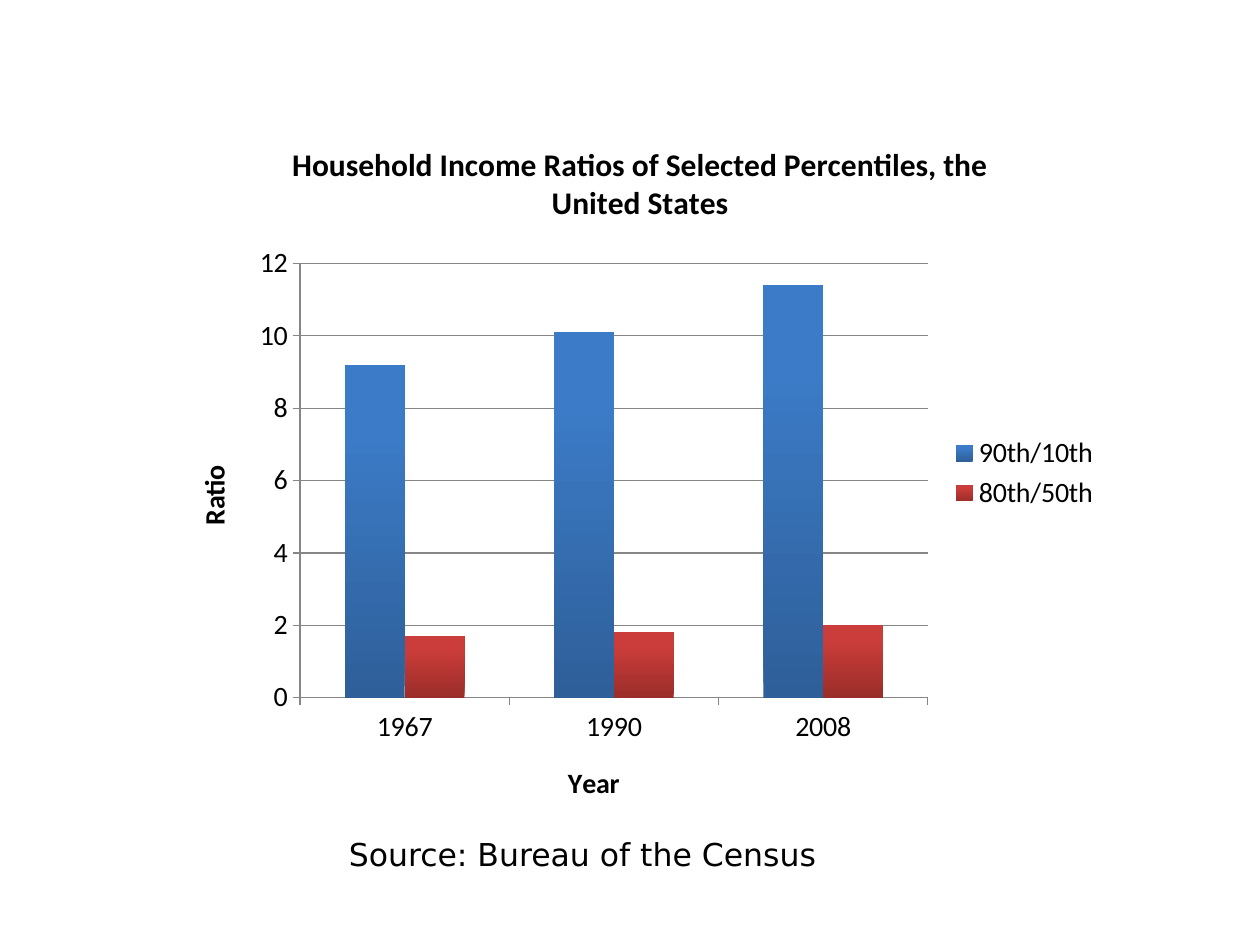
import pptx
import pptx.chart.data
import pptx.dml.color
import pptx.enum.chart
import pptx.util
from pptx.util import Inches

COLORS = {
    "text": "000000",
    "line": "868686",
    "blue_dark": "2E5F99",
    "blue_light": "3C7BC7",
    "red_dark": "9B2D2A",
    "red_light": "CB3D3A",
}
YEARS = ["1967", "1990", "2008"]
RATIOS = [
    ("90th/10th", [9.2, 10.1, 11.4], "blue"),
    ("80th/50th", [1.7, 1.8, 2], "red"),
]


def rgb(name):
    return pptx.dml.color.RGBColor.from_string(COLORS[name])


def style_font(font, size, bold=False, name="Calibri"):
    font.size = pptx.util.Pt(size)
    font.bold = bold
    font.name = name
    font.color.rgb = rgb("text")


def write_text(frame, text, **font_format):
    run = frame.paragraphs[0].add_run()
    run.text = text
    style_font(run.font, **font_format)


def style_line(line):
    line.color.rgb = rgb("line")
    line.width = pptx.util.Pt(0.75)


def style_axis(axis, title):
    write_text(axis.axis_title.text_frame, title, size=16, bold=True)
    style_font(axis.tick_labels.font, 16)
    style_line(axis.format.line)
    axis.major_tick_mark = pptx.enum.chart.XL_TICK_MARK.OUTSIDE
    axis.minor_tick_mark = pptx.enum.chart.XL_TICK_MARK.NONE


def shade_series(series, hue):
    """Fill the columns from dark at the bottom to light near the top."""
    fill = series.format.fill
    fill.gradient()
    fill.gradient_angle = 90
    stops = zip(fill.gradient_stops, ("dark", "light"), (0, 0.8))
    for stop, shade, position in stops:
        stop.color.rgb = rgb(f"{hue}_{shade}")
        stop.position = position
    series.format.line.fill.background()
    series.invert_if_negative = False


def add_ratio_chart(slide):
    data = pptx.chart.data.CategoryChartData()
    data.categories = YEARS
    for name, values, _ in RATIOS:
        data.add_series(name, values)
    chart = slide.shapes.add_chart(
        pptx.enum.chart.XL_CHART_TYPE.COLUMN_CLUSTERED,
        Inches(1.33), Inches(0.92), Inches(7.5), Inches(5.67), data,
    ).chart
    style_font(chart.font, 10)

    chart.has_title = True
    write_text(
        chart.chart_title.text_frame,
        "Household Income Ratios of Selected Percentiles, the United States",
        size=18, bold=True,
    )
    chart.chart_title.include_in_layout = False

    style_axis(chart.category_axis, "Year")
    style_axis(chart.value_axis, "Ratio")
    chart.value_axis.minimum_scale = 0
    chart.value_axis.maximum_scale = 12
    chart.value_axis.major_unit = 2
    chart.value_axis.has_major_gridlines = True
    style_line(chart.value_axis.major_gridlines.format.line)

    chart.has_legend = True
    chart.legend.position = pptx.enum.chart.XL_LEGEND_POSITION.RIGHT
    chart.legend.include_in_layout = False
    style_font(chart.legend.font, 16)

    plot = chart.plots[0]
    plot.gap_width = 150
    plot.vary_by_categories = False
    for series, (_, _, hue) in zip(plot.series, RATIOS):
        shade_series(series, hue)


def add_source_note(slide):
    note = slide.shapes.add_textbox(
        Inches(2.67), Inches(6.58), Inches(4.92), Inches(0.4)
    )
    note.text_frame.word_wrap = True
    write_text(
        note.text_frame, "Source: Bureau of the Census",
        size=18, name="DejaVu Sans",
    )


def main():
    presentation = pptx.Presentation()
    presentation.slide_width = Inches(10)
    presentation.slide_height = Inches(7.5)
    slide = presentation.slides.add_slide(presentation.slide_layouts[6])
    add_ratio_chart(slide)
    add_source_note(slide)
    presentation.save("out.pptx")


if __name__ == "__main__":
    main()
